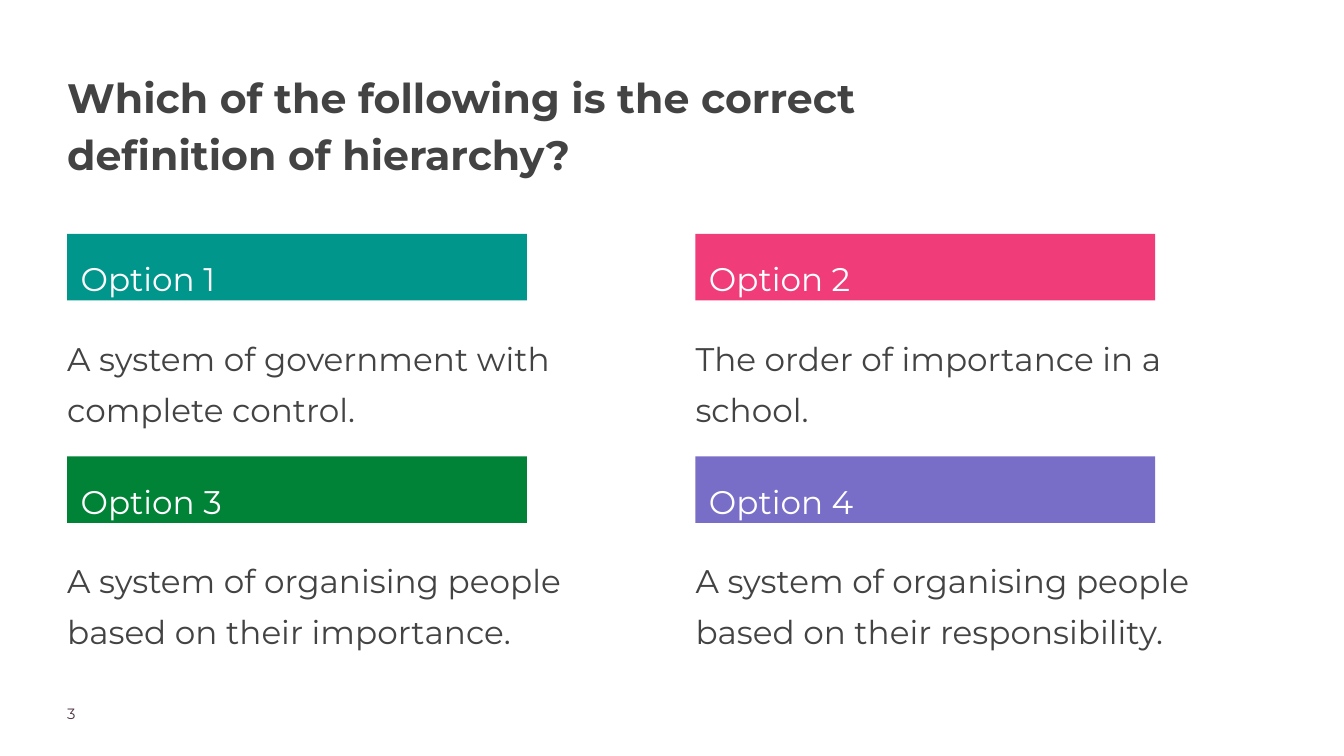
from dataclasses import dataclass

from pptx import Presentation
from pptx.dml.color import RGBColor
from pptx.enum.shapes import MSO_SHAPE as Shape
from pptx.enum.text import MSO_ANCHOR as Anchor, PP_ALIGN as Align
from pptx.util import Pt


@dataclass(frozen=True)
class Theme:
    """Colours and type sizes of the slide."""
    font: str = "Montserrat"
    ink: str = "434343"
    label: str = "FFFFFF"
    folio: str = "4B3241"
    title_size: int = 44
    option_size: int = 35
    folio_size: int = 16


THEME = Theme()
MARGIN = 72
COLUMN_STEP = 673.2
ROW_TOP = 250.5
ROW_STEP = 238.5
ANSWER_DROP = 99.5

OPTIONS = [
    ("Option 1", "00968C", "A system of government with complete control."),
    ("Option 2", "F03C78", "The order of importance in a school."),
    ("Option 3", "008237", "A system of organising people based on their importance."),
    ("Option 4", "786EC8", "A system of organising people based on their responsibility."),
]


def write(holder, wording, size, colour, spacing=1.0, bold=False, inset=0):
    """Put one left-aligned paragraph at the top of a shape."""
    frame = holder.text_frame
    frame.text = wording
    frame.word_wrap = True
    frame.vertical_anchor = Anchor.TOP
    frame.margin_left = frame.margin_right = Pt(inset)
    frame.margin_top = frame.margin_bottom = Pt(inset)
    paragraph = frame.paragraphs[0]
    paragraph.alignment = Align.LEFT
    paragraph.line_spacing = spacing
    font = paragraph.runs[0].font
    font.name, font.size, font.bold = THEME.font, Pt(size), bold
    font.color.rgb = RGBColor.from_string(colour)


def add_text(slide, left, top, width, height, wording, size, colour, **style):
    """Add a text box without insets."""
    box = slide.shapes.add_textbox(Pt(left), Pt(top), Pt(width), Pt(height))
    write(box, wording, size, colour, **style)


def add_banner(slide, left, top, label, colour):
    """Add the coloured bar that names an option."""
    banner = slide.shapes.add_shape(Shape.RECTANGLE, Pt(left), Pt(top), Pt(492.5), Pt(71.3))
    banner.shadow.inherit = False
    banner.fill.solid()
    banner.fill.fore_color.rgb = RGBColor.from_string(colour)
    banner.line.fill.background()
    write(banner, label, THEME.option_size, THEME.label, spacing=1.3, inset=14.4)


def add_option(slide, index, label, colour, answer):
    """Add an option's banner and answer in its grid cell."""
    row, column = divmod(index, 2)
    left = MARGIN + column * COLUMN_STEP
    top = ROW_TOP + row * ROW_STEP
    add_banner(slide, left, top, label, colour)
    add_text(slide, left, top + ANSWER_DROP, 622, 99.4, answer,
             THEME.option_size, THEME.ink, spacing=1.3)


def main():
    """Build the quiz slide and save it."""
    deck = Presentation()
    deck.slide_width, deck.slide_height = Pt(1440), Pt(810)
    slide = deck.slides.add_slide(deck.slide_layouts[6])
    add_text(slide, MARGIN, 70, 1039.7, 128,
             "Which of the following is the correct definition of hierarchy?",
             THEME.title_size, THEME.ink, spacing=1.15, bold=True)
    for index, option in enumerate(OPTIONS):
        add_option(slide, index, *option)
    add_text(slide, MARGIN, 754.5, 113, 28, "3", THEME.folio_size, THEME.folio)
    deck.save("out.pptx")


if __name__ == "__main__":
    main()
